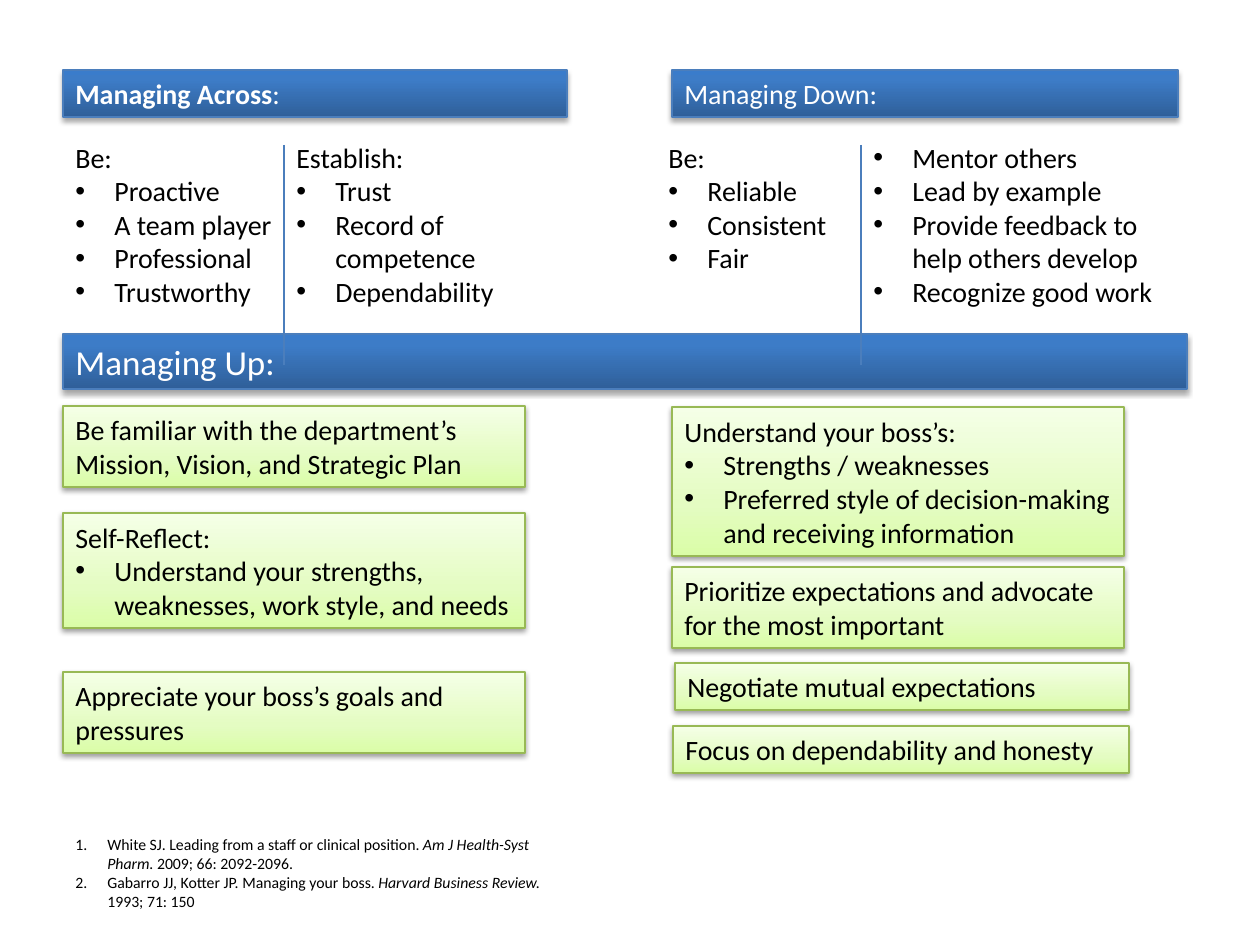
from copy import deepcopy

from lxml import etree
from pptx import Presentation
from pptx.dml.color import RGBColor
from pptx.enum.shapes import MSO_CONNECTOR, MSO_SHAPE
from pptx.enum.text import MSO_ANCHOR, MSO_AUTO_SIZE, PP_ALIGN
from pptx.oxml.ns import qn
from pptx.util import Pt

RECTANGLE = MSO_SHAPE.RECTANGLE
STRAIGHT = MSO_CONNECTOR.STRAIGHT
MIDDLE = MSO_ANCHOR.MIDDLE
LEFT = PP_ALIGN.LEFT
GROW = MSO_AUTO_SIZE.SHAPE_TO_FIT_TEXT

EMU_PER_PX = 914400 / 126
BLUE = {
    "stops": [(0, "2F5F99"), (80, "3D7CC7"), (100, "3A7CCB")],
    "line": "4B7EBC", "text": "FFFFFF", "shadow_alpha": 35, "shadow_distance": 1.8,
}
GREEN = {
    "stops": [(0, "DAFDA7"), (35, "E4FCC2"), (100, "F5FFE7")],
    "line": "98B955", "text": "000000", "shadow_alpha": 38, "shadow_distance": 1.6,
}


def px(length):
    return round(length * EMU_PER_PX)


def color(hex_value):
    return RGBColor.from_string(hex_value)


def add_xml(parent, tag, **attributes):
    values = {key: str(value) for key, value in attributes.items()}
    return etree.SubElement(parent, qn(tag), values)


class Board:
    font = "Calibri"
    body_size = 16
    ink = "000000"
    bullet_indent = 39
    number_indent = 32

    def __init__(self, slide):
        self.slide = slide

    def style_run(self, run, size, ink, bold=False, italic=False):
        run.font.name = self.font
        run.font.size = Pt(size)
        run.font.color.rgb = color(ink)
        if bold:
            run.font.bold = True
        if italic:
            run.font.italic = True

    def mark(self, paragraph, indent, tag, **attributes):
        properties = paragraph._p.get_or_add_pPr()
        properties.set("marL", str(px(indent)))
        properties.set("indent", str(-px(indent)))
        add_xml(properties, "a:buFont", typeface="Arial" if tag == "a:buChar" else "+mj-lt")
        add_xml(properties, tag, **attributes)

    def fill_text(self, shape, intro, bullets, size, ink):
        frame = shape.text_frame
        frame.word_wrap = True
        frame.auto_size = GROW
        frame.text = "\n".join(intro + [bullet.replace("\n", "\v") for bullet in bullets])
        for index, paragraph in enumerate(frame.paragraphs):
            paragraph.alignment = LEFT
            if index >= len(intro):
                self.mark(paragraph, self.bullet_indent, "a:buChar", char="•")
            for run in paragraph.runs:
                self.style_run(run, size, ink)
            for line_break in paragraph._p.findall(qn("a:br")):
                line_break.append(deepcopy(paragraph.runs[0]._r.rPr))

    def panel(self, box, theme, intro, bullets=(), size=body_size):
        shape = self.slide.shapes.add_shape(RECTANGLE, *map(px, box))
        shape.fill.gradient()
        shape.fill.gradient_angle = 90
        properties = shape.element.spPr
        stops = properties.find(qn("a:gradFill")).find(qn("a:gsLst"))
        stops.clear()
        for position, tone in theme["stops"]:
            stop = add_xml(stops, "a:gs", pos=position * 1000)
            add_xml(stop, "a:srgbClr", val=tone)
        shape.line.color.rgb = color(theme["line"])
        shape.line.width = Pt(0.75)
        shape.shadow.inherit = False
        shadow = add_xml(
            properties.find(qn("a:effectLst")), "a:outerShdw", blurRad=Pt(3.1),
            dist=Pt(theme["shadow_distance"]), dir=5400000, rotWithShape=0)
        shade = add_xml(shadow, "a:srgbClr", val="000000")
        add_xml(shade, "a:alpha", val=theme["shadow_alpha"] * 1000)
        shape.text_frame.vertical_anchor = MIDDLE
        self.fill_text(shape, [intro], bullets, size, theme["text"])
        return shape

    def points(self, box, intro, bullets):
        shape = self.slide.shapes.add_textbox(*map(px, box))
        self.fill_text(shape, intro, bullets, self.body_size, self.ink)

    def divider(self, x, top, bottom):
        line = self.slide.shapes.add_connector(STRAIGHT, px(x), px(top), px(x), px(bottom))
        line.line.color.rgb = color(BLUE["line"])
        line.line.width = Pt(0.75)
        add_xml(line._element.spPr, "a:effectLst")

    def references(self, box, entries):
        frame = self.slide.shapes.add_textbox(*map(px, box)).text_frame
        frame.word_wrap = True
        frame.auto_size = GROW
        for index, (article, journal, issue) in enumerate(entries):
            paragraph = frame.add_paragraph() if index else frame.paragraphs[0]
            self.mark(paragraph, self.number_indent, "a:buAutoNum", type="arabicPeriod")
            for text in (article, journal, issue):
                run = paragraph.add_run()
                run.text = text
                self.style_run(run, 9, self.ink, italic=text == journal)


def main():
    deck = Presentation()
    deck.slide_width, deck.slide_height = px(1260), px(945)
    board = Board(deck.slides.add_slide(deck.slide_layouts[6]))

    left, right = 63, 672
    across_divider, down_divider = 284, 861
    points_top = 134

    across = board.panel((left, 70, 504, 47), BLUE, "Managing Across")
    across_title = across.text_frame.paragraphs[0]
    across_title.runs[0].font.bold = True
    colon = across_title.add_run()
    colon.text = ":"
    board.style_run(colon, board.body_size, BLUE["text"])
    board.points((left, points_top, 270, 183), ["Be:"],
                 ["Proactive", "A team player", "Professional", "Trustworthy"])
    board.points((across_divider, points_top, 294, 183), ["Establish:"],
                 ["Trust", "Record of competence", "Dependability"])

    board.panel((right, 70, 506, 47), BLUE, "Managing Down:")
    board.points((656, points_top, 257, 149), ["Be:"], ["Reliable", "Consistent", "Fair"])
    board.points((down_divider, points_top, 388, 183), [],
                 ["Mentor others", "Lead by example",
                  "Provide feedback to\nhelp others develop", "Recognize good work"])

    board.panel((left, 334, 1124, 55), BLUE, "Managing Up:", size=20)
    up_panels = [
        ((675, 663, 454, 47), "Negotiate mutual expectations", []),
        ((left, 406, 462, 81),
         "Be familiar with the department’s Mission, Vision, and Strategic Plan", []),
        ((left, 672, 462, 81), "Appreciate your boss’s goals and pressures", []),
        ((left, 513, 462, 115), "Self-Reflect:",
         ["Understand your strengths, weaknesses, work style, and needs"]),
        ((right, 407, 452, 149), "Understand your boss’s:",
         ["Strengths / weaknesses",
          "Preferred style of decision-making and receiving information"]),
        ((right, 567, 452, 81),
         "Prioritize expectations and advocate for the most important", []),
        ((673, 726, 456, 47), "Focus on dependability and honesty", []),
    ]
    for box, intro, bullets in up_panels:
        board.panel(box, GREEN, intro, bullets)

    for x in (across_divider, down_divider):
        board.divider(x, 145, 365)

    board.references((left, 829, 504, 111), [
        ("White SJ. Leading from a staff or clinical position. ",
         "Am J Health-Syst Pharm. ", "2009; 66: 2092-2096."),
        ("Gabarro JJ, Kotter JP. Managing your boss. ",
         "Harvard Business Review. ", "1993; 71: 150"),
    ])
    deck.save("out.pptx")


if __name__ == "__main__":
    main()
